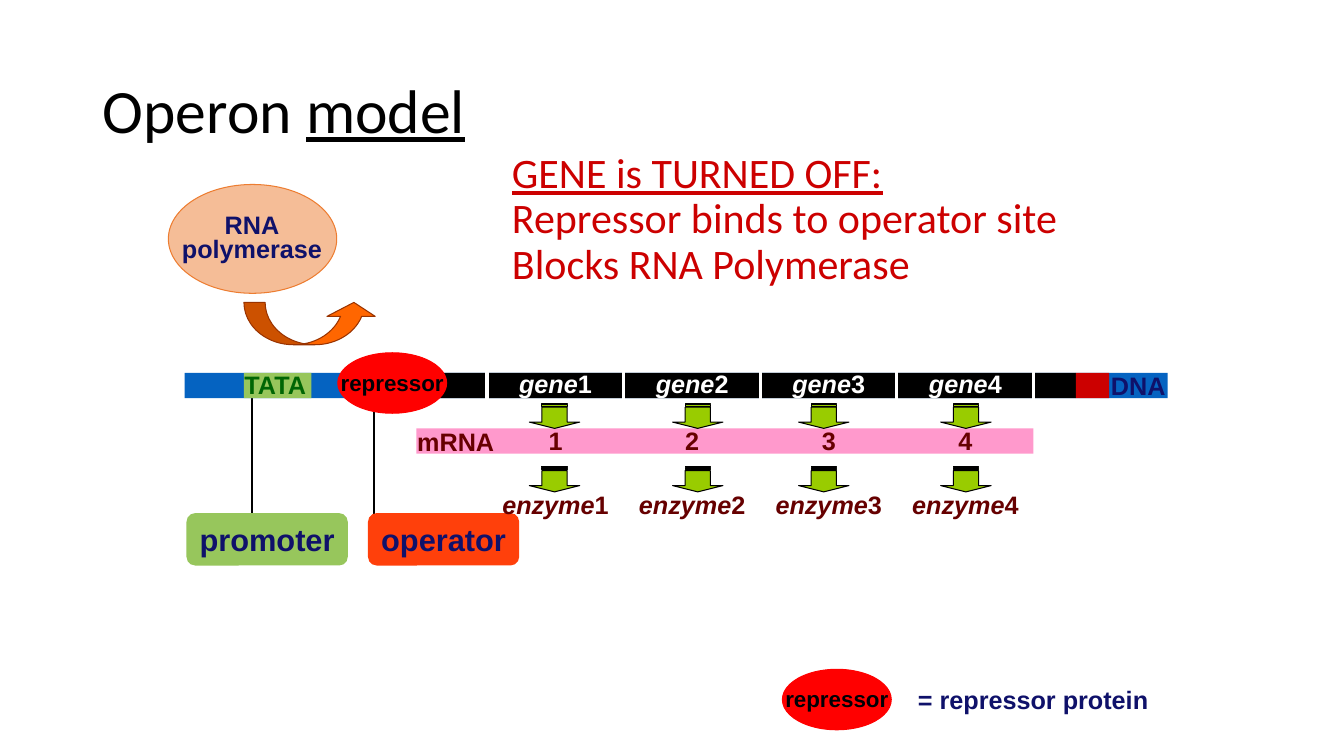
import pptx
import pptx.util
import pptx.dml.color
import pptx.enum.shapes
import pptx.enum.text
import pptx.oxml.ns
import lxml.etree

Inches = pptx.util.Inches
Pt = pptx.util.Pt
RGBColor = pptx.dml.color.RGBColor
SHAPE = pptx.enum.shapes.MSO_SHAPE
ALIGN = pptx.enum.text.PP_ALIGN
ANCHOR = pptx.enum.text.MSO_ANCHOR
AUTO_SIZE = pptx.enum.text.MSO_AUTO_SIZE
qn = pptx.oxml.ns.qn

BLACK = RGBColor(0x00, 0x00, 0x00)
NEAR_BLACK = RGBColor(0x00, 0x00, 0x05)
WHITE = RGBColor(0xFF, 0xFF, 0xFF)
NAVY = RGBColor(0x0F, 0x11, 0x6A)
MAROON = RGBColor(0x66, 0x00, 0x00)
DARK_GREEN = RGBColor(0x00, 0x66, 0x04)
DNA_BLUE = RGBColor(0x05, 0x63, 0xC1)
PROMOTER_GREEN = RGBColor(0x97, 0xC6, 0x5C)
OPERATOR_ORANGE = RGBColor(0xFF, 0x40, 0x0B)
DARK_RED = RGBColor(0xCC, 0x00, 0x00)
RED = RGBColor(0xFF, 0x00, 0x00)
PINK = RGBColor(0xFF, 0x99, 0xCC)
POLYMERASE = RGBColor(0xED, 0x7D, 0x31)
ORANGE = RGBColor(0xFF, 0x66, 0x00)
BROWN = RGBColor(0x99, 0x33, 0x00)
LIME = RGBColor(0x99, 0xCC, 0x00)


def add_span(para, text, size=18, color=NAVY, font="Arial", bold=True,
             italic=False, underline=False):
    span = para.add_run()
    span.text = text
    span.font.size = Pt(size)
    span.font.color.rgb = color
    span.font.name = font
    span.font.bold = bold
    span.font.italic = italic
    span.font.underline = underline


class OperonSlide:
    def __init__(self, deck):
        self.slide = deck.slides.add_slide(deck.slide_layouts[5])
        self.shapes = self.slide.shapes
        self.heading = dict(font="Calibri", bold=False)

    def title(self, plain, underlined):
        box = self.shapes.title
        box.left, box.top = Inches(0.92), Inches(0.4)
        box.width, box.height = Inches(11.5), Inches(1.45)
        frame = box.text_frame
        frame.auto_size = AUTO_SIZE.NONE
        frame.vertical_anchor = ANCHOR.MIDDLE
        para = frame.paragraphs[0]
        para.alignment = ALIGN.LEFT
        para.line_spacing = 0.9
        add_span(para, plain, size=44, color=BLACK, **self.heading)
        add_span(para, underlined, size=44, color=BLACK, underline=True, **self.heading)

    def message(self, headline, *lines):
        box = self.shapes.add_textbox(Inches(4.98), Inches(1.46), Inches(6.84), Inches(1.5))
        box.text_frame.word_wrap = True
        para = box.text_frame.paragraphs[0]
        para.line_spacing = 0.9
        para.space_before = Pt(10)
        add_span(para, headline, size=30, color=DARK_RED, underline=True, **self.heading)
        for line in lines:
            para.add_line_break()
            add_span(para, line, size=30, color=DARK_RED, **self.heading)

    def shape(self, kind, left, top, width, height, fill, line=None, adjust=(),
              opacity=None):
        shape = self.shapes.add_shape(kind, Inches(left), Inches(top),
                                      Inches(width), Inches(height))
        shape.shadow.inherit = False
        shape.fill.solid()
        shape.fill.fore_color.rgb = fill
        if line is None:
            shape.line.fill.background()
        else:
            shape.line.color.rgb = line
            shape.line.width = Pt(0.75)
        for index, value in enumerate(adjust):
            shape.adjustments[index] = value
        if opacity is not None:
            color = shape._element.spPr.find(qn("a:solidFill"))[0]
            lxml.etree.SubElement(color, qn("a:alpha")).set("val", str(opacity * 1000))
        return shape

    def line(self, x, top, bottom, color, width):
        line = self.shapes.add_connector(pptx.enum.shapes.MSO_CONNECTOR.STRAIGHT,
                                         Inches(x), Inches(top), Inches(x), Inches(bottom))
        line.line.color.rgb = color
        line.line.width = Pt(width)
        lxml.etree.SubElement(line._element.spPr, qn("a:effectLst"))

    def fill_label(self, frame, *lines, spacing=None, align=ALIGN.CENTER, number="", **style):
        """Write unwrapped lines; a number follows the last word upright."""
        frame.word_wrap = False
        frame.auto_size = AUTO_SIZE.SHAPE_TO_FIT_TEXT
        frame.vertical_anchor = ANCHOR.MIDDLE
        for index, text in enumerate(lines):
            para = frame.add_paragraph() if index else frame.paragraphs[0]
            para.alignment = align
            para.line_spacing = spacing
            add_span(para, text, **style)
        if number:
            add_span(para, number, **{**style, "italic": False})

    def label(self, center, top, width, *lines, height=0.4, **style):
        box = self.shapes.add_textbox(Inches(center - width / 2), Inches(top),
                                      Inches(width), Inches(height))
        self.fill_label(box.text_frame, *lines, **style)

    def site(self, text, left, width, line_x, fill):
        """Draw a named tag hanging from the DNA strand."""
        self.line(line_x, 3.95, 5.2, BLACK, 1.5)
        tag = self.shape(SHAPE.ROUNDED_RECTANGLE, left, 5.09, width, 0.52, fill)
        self.fill_label(tag.text_frame, text, size=22)

    def segment(self, left, width, fill, top=3.7):
        self.shape(SHAPE.RECTANGLE, left, top, width, 0.25, fill)

    def repressor(self, left, top):
        self.shape(SHAPE.OVAL, left, top, 1.08, 0.6, RED, RED)
        self.label(left + 0.54, top + 0.11, 1.23, "repressor", height=0.37,
                   size=16, color=NEAR_BLACK)

    def down_arrow(self, center, top):
        arrow = self.shape(SHAPE.STRIPED_RIGHT_ARROW, center - 0.125, top - 0.125,
                           0.25, 0.5, LIME, BLACK, adjust=(0.5, 0.25))
        arrow.rotation = 90


def main():
    deck = pptx.Presentation()
    deck.slide_width, deck.slide_height = Inches(13.33), Inches(7.5)
    operon = OperonSlide(deck)
    operon.title("Operon ", "model")

    operon.segment(4.13, 6.12, PINK, top=4.25)
    operon.site("operator", 3.65, 1.5, 3.71, OPERATOR_ORANGE)
    operon.site("promoter", 1.85, 1.6, 2.5, PROMOTER_GREEN)
    for left, width, fill in [(1.83, 9.75, DNA_BLUE), (3.42, 7.25, BLACK),
                              (2.42, 0.67, PROMOTER_GREEN), (10.67, 0.33, DARK_RED),
                              (3.42, 0.33, OPERATOR_ORANGE)]:
        operon.segment(left, width, fill)
    operon.label(11.29, 3.62, 0.74, "DNA")
    operon.label(2.73, 3.61, 0.82, "TATA", color=DARK_GREEN)

    operon.shape(SHAPE.OVAL, 1.67, 1.83, 1.67, 1.08, POLYMERASE, POLYMERASE, opacity=50)
    operon.label(2.5, 2.08, 1.6, "RNA", "polymerase", height=0.59, spacing=0.8)
    operon.shape(SHAPE.CURVED_UP_ARROW, 2.42, 3, 1.33, 0.42, ORANGE, BROWN,
                 adjust=(0.5, 1.14, 0.33))
    operon.repressor(3.35, 3.5)
    operon.repressor(7.76, 6.64)
    operon.label(10.25, 6.74, 2.49, "= repressor protein", align=ALIGN.LEFT)
    operon.message("GENE is TURNED OFF:", "Repressor binds to operator site",
                   "Blocks RNA Polymerase")

    gene_pitch = 1.355
    for divider in range(5):
        operon.line(4.83 + divider * gene_pitch, 3.58, 4.08, WHITE, 2.25)
    for index, arrow_center in enumerate([5.5, 6.92, 8.17, 9.58]):
        center = 5.51 + index * gene_pitch
        number = str(index + 1)
        operon.label(center, 3.6, 0.92, "gene", number=number, color=WHITE, italic=True)
        operon.label(center, 4.17, 0.34, number, color=MAROON)
        operon.label(center, 4.8, 1.26, "enzyme", number=number, color=MAROON, italic=True)
        for top in (4, 4.63):
            operon.down_arrow(arrow_center, top)
    operon.label(4.52, 4.18, 0.97, "mRNA", color=MAROON)
    deck.save("out.pptx")


if __name__ == "__main__":
    main()
